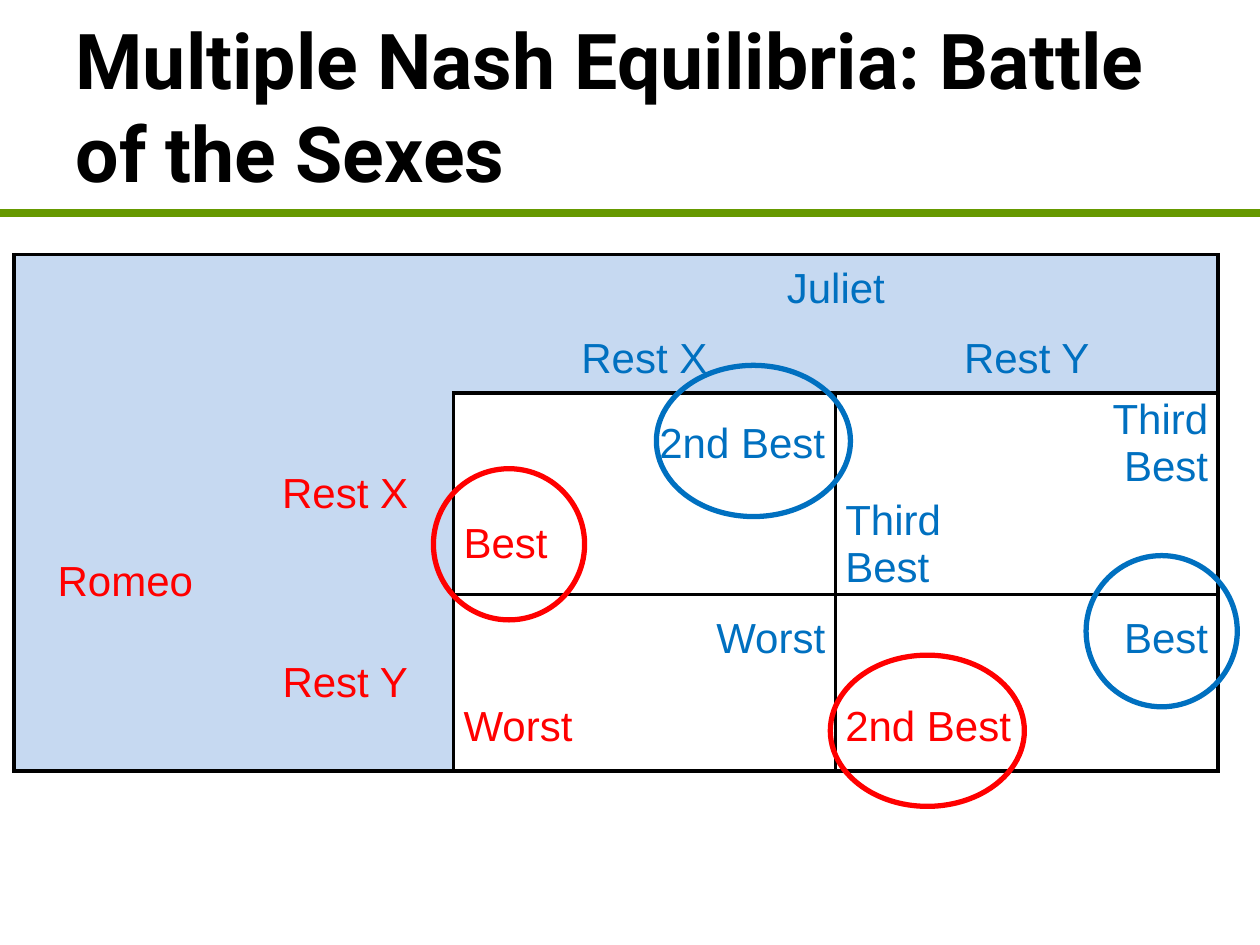
import pptx
import pptx.dml.color
import pptx.enum.shapes
import pptx.enum.text
import pptx.oxml
import pptx.oxml.ns
import pptx.util
from lxml import etree

RGBColor = pptx.dml.color.RGBColor
Inches = pptx.util.Inches
Pt = pptx.util.Pt
PP_ALIGN = pptx.enum.text.PP_ALIGN
MSO_ANCHOR = pptx.enum.text.MSO_ANCHOR
qn = pptx.oxml.ns.qn

BLACK = RGBColor(0x00, 0x00, 0x00)
WHITE = RGBColor(0xFF, 0xFF, 0xFF)
GREEN = RGBColor(0x66, 0x99, 0x00)
PALE_BLUE = RGBColor(0xC6, 0xD9, 0xF1)
JULIET_BLUE = RGBColor(0x00, 0x70, 0xC0)
ROMEO_RED = RGBColor(0xFF, 0x00, 0x00)

BORDER_WIDTH = Pt(2.25)
COLUMN_WIDTHS = [1.77, 1.72, 1.52, 1.51, 1.52, 1.52]
ROW_HEIGHTS = [0.55, 0.55, 0.8, 0.8, 0.7, 0.7]
MERGES = [(0, 2, 0, 5), (1, 2, 1, 3), (1, 4, 1, 5),
          (2, 0, 5, 0), (2, 1, 3, 1), (4, 1, 5, 1)]

# row, column, text, colour, alignment
ENTRIES = [
    (0, 2, "Juliet", JULIET_BLUE, PP_ALIGN.CENTER),
    (1, 2, "Rest X", JULIET_BLUE, PP_ALIGN.CENTER),
    (1, 4, "Rest Y", JULIET_BLUE, PP_ALIGN.CENTER),
    (2, 0, "Romeo", ROMEO_RED, PP_ALIGN.CENTER),
    (2, 1, "Rest X", ROMEO_RED, PP_ALIGN.CENTER),
    (4, 1, "Rest Y", ROMEO_RED, PP_ALIGN.CENTER),
    (2, 3, "2nd Best", JULIET_BLUE, PP_ALIGN.RIGHT),
    (2, 5, "Third Best", JULIET_BLUE, PP_ALIGN.RIGHT),
    (3, 2, "Best", ROMEO_RED, PP_ALIGN.LEFT),
    (3, 4, "Third Best", JULIET_BLUE, PP_ALIGN.LEFT),
    (4, 3, "Worst", JULIET_BLUE, PP_ALIGN.RIGHT),
    (4, 5, "Best", JULIET_BLUE, PP_ALIGN.RIGHT),
    (5, 2, "Worst", ROMEO_RED, PP_ALIGN.LEFT),
    (5, 4, "2nd Best", ROMEO_RED, PP_ALIGN.LEFT),
]

# left, top, width, colour
BEST_REPLIES = [
    (3.44, 3.72, 1.2, ROMEO_RED),
    (6.59, 5.2, 1.54, ROMEO_RED),
    (8.62, 4.41, 1.2, JULIET_BLUE),
    (5.21, 2.9, 1.54, JULIET_BLUE),
]


def add_title(slide, text):
    title = slide.shapes.title
    title.left, title.top = Inches(0.5), Inches(0)
    title.width, title.height = Inches(9), Inches(1.67)
    title.text_frame.text = text
    title.text_frame.word_wrap = True
    title.text_frame.auto_size = pptx.enum.text.MSO_AUTO_SIZE.NONE
    title.text_frame.vertical_anchor = MSO_ANCHOR.MIDDLE
    heading = title.text_frame.paragraphs[0]
    heading.alignment = PP_ALIGN.LEFT
    heading.font.name = "Roboto"
    heading.font.size = Pt(44)
    heading.font.bold = True
    heading.font.color.rgb = BLACK


def add_rule(slide):
    rule = slide.shapes.add_connector(
        pptx.enum.shapes.MSO_CONNECTOR.STRAIGHT,
        Inches(0), Inches(1.69), Inches(10), Inches(1.69))
    rule.line.color.rgb = GREEN
    rule.line.width = Pt(4.5)
    etree.SubElement(rule._element.spPr, qn("a:effectLst"))


def block_of(row, column):
    """Name the outlined block that a cell belongs to, None outside the game."""
    if not (0 <= row < len(ROW_HEIGHTS) and 0 <= column < len(COLUMN_WIDTHS)):
        return None
    if row < 2 or column < 2:
        return "header"
    return row // 2, column // 2


def set_borders(cell, row, column):
    neighbours = {
        "L": (row, column - 1),
        "R": (row, column + cell.span_width),
        "T": (row - 1, column),
        "B": (row + cell.span_height, column),
    }
    properties = cell._tc.get_or_add_tcPr()
    for position, (side, neighbour) in enumerate(neighbours.items()):
        border = etree.Element(qn(f"a:ln{side}"), w=str(BORDER_WIDTH))
        if block_of(*neighbour) != block_of(row, column):
            fill = etree.SubElement(border, qn("a:solidFill"))
            etree.SubElement(fill, qn("a:srgbClr"), val=str(BLACK))
        else:
            etree.SubElement(border, qn("a:noFill"))
        properties.insert(position, border)


def write_entry(cell, text, color, alignment):
    cell.text = text
    entry = cell.text_frame.paragraphs[0]
    entry.alignment = alignment
    entry.font.name = "Arial"
    entry.font.size = Pt(24)
    entry.font.bold = False
    entry.font.color.rgb = color


def add_payoff_matrix(slide):
    matrix = slide.shapes.add_table(
        len(ROW_HEIGHTS), len(COLUMN_WIDTHS), Inches(0.11), Inches(2.02),
        Inches(sum(COLUMN_WIDTHS)), Inches(sum(ROW_HEIGHTS))).table
    for column, width in zip(matrix.columns, COLUMN_WIDTHS):
        column.width = Inches(width)
    for row, height in zip(matrix.rows, ROW_HEIGHTS):
        row.height = Inches(height)
    for top, left, bottom, right in MERGES:
        matrix.cell(top, left).merge(matrix.cell(bottom, right))
    for row in range(len(ROW_HEIGHTS)):
        for column in range(len(COLUMN_WIDTHS)):
            cell = matrix.cell(row, column)
            cell.fill.solid()
            in_header = block_of(row, column) == "header"
            cell.fill.fore_color.rgb = PALE_BLUE if in_header else WHITE
            cell.vertical_anchor = MSO_ANCHOR.MIDDLE
            cell.margin_left = cell.margin_right = Inches(0.08)
            cell.margin_top = cell.margin_bottom = 0
            set_borders(cell, row, column)
    for row, column, text, color, alignment in ENTRIES:
        write_entry(matrix.cell(row, column), text, color, alignment)


def circle_best_reply(slide, left, top, width, color):
    circle = slide.shapes.add_shape(
        pptx.enum.shapes.MSO_SHAPE.OVAL,
        Inches(left), Inches(top), Inches(width), Inches(1.2))
    circle.fill.background()
    circle.line.color.rgb = color
    circle.line.width = Pt(3)
    circle.shadow.inherit = False


def main():
    presentation = pptx.Presentation()
    presentation.slide_width = Inches(10)
    presentation.slide_height = Inches(7.5)
    slide = presentation.slides.add_slide(presentation.slide_layouts[5])
    add_rule(slide)
    add_title(slide, "Multiple Nash Equilibria: Battle of the Sexes")
    add_payoff_matrix(slide)
    for best_reply in BEST_REPLIES:
        circle_best_reply(slide, *best_reply)
    presentation.save("out.pptx")


if __name__ == "__main__":
    main()
